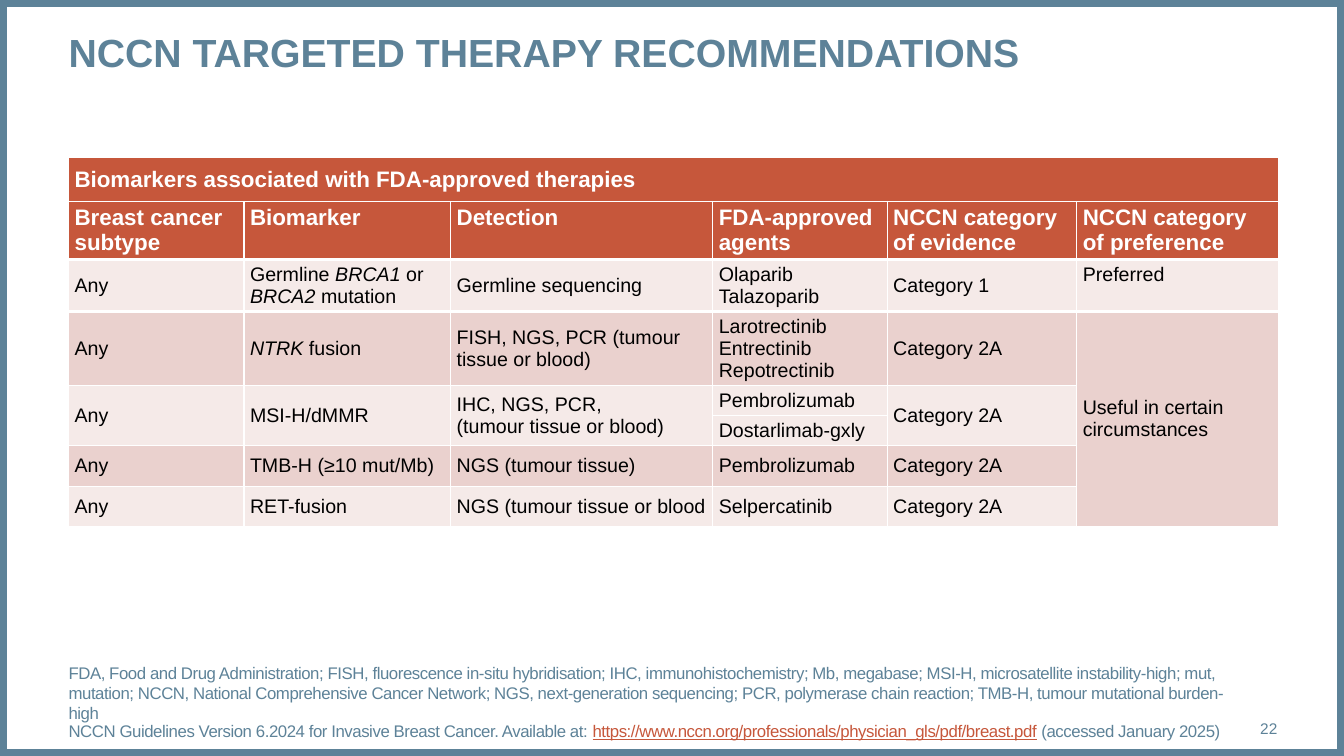
from lxml import etree
from pptx import Presentation
from pptx.dml.color import RGBColor
from pptx.enum.shapes import MSO_SHAPE
from pptx.enum.text import MSO_ANCHOR, MSO_AUTO_SIZE, PP_ALIGN
from pptx.oxml.ns import qn
from pptx.util import Inches, Pt

RECTANGLE = MSO_SHAPE.RECTANGLE
TOP, MIDDLE, BOTTOM = MSO_ANCHOR.TOP, MSO_ANCHOR.MIDDLE, MSO_ANCHOR.BOTTOM
LEFT, RIGHT = PP_ALIGN.LEFT, PP_ALIGN.RIGHT
NO_AUTOFIT = MSO_AUTO_SIZE.NONE

COLORS = {"slate": "5D8298", "rust": "C6573B", "pale": "F5EAE8",
          "rose": "EAD1CE", "white": "FFFFFF", "black": "000000"}
FONT = "Arial"
SLIDE_W, SLIDE_H = 13.33, 7.5
MARGIN, CONTENT_W = 0.68, 11.99

COLUMN_WIDTHS = [1.74, 2.05, 2.6, 1.73, 1.88, 2]
ROW_HEIGHTS = [0.44, 0.44, 0.4, 0.56, 0.28, 0.28, 0.4, 0.4]
ROW_FILLS = ["rust", "rust", "pale", "rose", "pale", "pale", "rose", "pale"]
HEADER_ROWS = 2
THERAPIES = [
    ["Biomarkers associated with FDA-approved therapies"] + [None] * 5,
    ["Breast cancer subtype", "Biomarker", "Detection", "FDA-approved agents",
     "NCCN category of evidence", "NCCN category of preference"],
    ["Any", "Germline *BRCA1 *or *BRCA2* mutation", "Germline sequencing",
     "Olaparib\nTalazoparib", "Category 1", "Preferred"],
    ["Any", "*NTRK* fusion", "FISH, NGS, PCR (tumour tissue or blood)",
     "Larotrectinib|Entrectinib|Repotrectinib", "Category 2A",
     "Useful in certain circumstances"],
    ["Any", "MSI-H/dMMR", "IHC, NGS, PCR, \n(tumour tissue or blood)",
     "Pembrolizumab", "Category 2A", None],
    [None, None, None, "Dostarlimab-gxly", None, None],
    ["Any", "TMB-H (≥10 mut/Mb)", "NGS (tumour tissue)", "Pembrolizumab",
     "Category 2A", None],
    ["Any", "RET-fusion", "NGS (tumour tissue or blood", "Selpercatinib",
     "Category 2A", None],
]
SPANS = [((0, 0), (0, 5)), ((3, 5), (7, 5))] + [
    ((4, column), (5, column)) for column in (0, 1, 2, 4)]
TOP_ANCHORED = {(1, column) for column in range(6)} | {(2, 3), (2, 5), (3, 3)}
THICK_BELOW = {1, 2}

ABBREVIATIONS = (
    "FDA, Food and Drug Administration; FISH, fluorescence in-situ hybridisation; "
    "IHC, immunohistochemistry; Mb, megabase; MSI-H, microsatellite instability-high; "
    "mut, mutation; NCCN, National Comprehensive Cancer Network; NGS, next-generation "
    "sequencing; PCR, polymerase chain reaction; TMB-H, tumour mutational burden-high")
CITATION = "NCCN Guidelines Version 6.2024 for Invasive Breast Cancer. Available at: "
GUIDELINE_URL = "https://www.nccn.org/professionals/physician_gls/pdf/breast.pdf"
ACCESSED = " (accessed January 2025)"


def rgb(name):
    return RGBColor.from_string(COLORS[name])


def write(paragraph, text, size=14, color="black", bold=False, italic=False,
          underline=False, spacing=None, align=LEFT):
    paragraph.alignment = align
    for index, line in enumerate(text.split("\n")):
        if index:
            paragraph.add_line_break()
        run = paragraph.add_run()
        run.text = line
        font = run.font
        font.name, font.size = FONT, Pt(size)
        font.bold, font.italic, font.underline = bold, italic, underline
        font.color.rgb = rgb(color)
        if spacing is not None:
            run._r.get_or_add_rPr().set("spc", str(round(spacing * 100)))


def place(shape, box, anchor):
    shape.left, shape.top, shape.width, shape.height = map(Inches, box)
    frame = shape.text_frame
    frame.word_wrap = True
    frame.auto_size = NO_AUTOFIT
    frame.vertical_anchor = anchor
    frame.margin_left = frame.margin_right = 0
    frame.margin_top = frame.margin_bottom = 0
    return frame


def add_border(slide, box):
    border = slide.shapes.add_shape(RECTANGLE, *map(Inches, box))
    border.shadow.inherit = False
    border.fill.background()
    border.line.color.rgb = rgb("slate")
    border.line.width = Pt(10)


def add_title(slide, box):
    frame = place(slide.shapes.title, box, TOP)
    write(frame.paragraphs[0], "NCCN TARGETED THERAPY RECOMMENDATIONS",
          size=28, color="slate", bold=True)


def set_cell_borders(cell, widths):
    properties = cell._tc.get_or_add_tcPr()
    for index, (side, width) in enumerate(widths.items()):
        line = etree.Element(qn(f"a:ln{side}"), w=str(Pt(width)))
        fill = etree.SubElement(line, qn("a:solidFill"))
        etree.SubElement(fill, qn("a:srgbClr"), val=COLORS["white"])
        properties.insert(index, line)


def fill_cell(cell, row, column):
    cell.margin_left = cell.margin_right = Inches(0.06)
    cell.margin_top = cell.margin_bottom = Inches(0.04)
    cell.vertical_anchor = TOP if (row, column) in TOP_ANCHORED else MIDDLE
    cell.fill.solid()
    in_preference_span = column == 5 and row >= 3
    cell.fill.fore_color.rgb = rgb("rose" if in_preference_span else ROW_FILLS[row])
    set_cell_borders(cell, {"L": 1, "R": 1,
                            "T": 3 if row - 1 in THICK_BELOW else 1,
                            "B": 3 if row in THICK_BELOW else 1})
    content = THERAPIES[row][column]
    if content is None:
        return
    header = row < HEADER_ROWS
    for index, entry in enumerate(content.split("|")):
        frame = cell.text_frame
        paragraph = frame.add_paragraph() if index else frame.paragraphs[0]
        for part, words in enumerate(entry.split("*")):
            if words:
                write(paragraph, words, size=16 if header else 14, bold=header,
                      color="white" if header else "black", italic=part % 2 == 1)


def add_therapies(slide, box):
    therapies = slide.shapes.add_table(
        len(ROW_HEIGHTS), len(COLUMN_WIDTHS), *map(Inches, box)).table
    therapies.first_row = therapies.horz_banding = False
    for column, width in zip(therapies.columns, COLUMN_WIDTHS):
        column.width = Inches(width)
    for row, height in zip(therapies.rows, ROW_HEIGHTS):
        row.height = Inches(height)
    for first, last in SPANS:
        therapies.cell(*first).merge(therapies.cell(*last))
    for row in range(len(ROW_HEIGHTS)):
        for column in range(len(COLUMN_WIDTHS)):
            fill_cell(therapies.cell(row, column), row, column)


def add_references(slide, box):
    frame = place(slide.placeholders[1], box, BOTTOM)
    abbreviations, citation = frame.paragraphs[0], frame.add_paragraph()
    for paragraph in (abbreviations, citation):
        properties = paragraph._p.get_or_add_pPr()
        properties.set("marL", "0")
        properties.set("indent", "0")
        etree.SubElement(properties, qn("a:buNone"))
        paragraph.space_before = Pt(0)
    citation.line_spacing = 0.9
    citation.space_after = Pt(2)
    note = {"size": 12, "color": "slate", "spacing": -0.3}
    write(abbreviations, ABBREVIATIONS, **note)
    write(citation, CITATION, **note)
    write(citation, GUIDELINE_URL, **{**note, "color": "rust", "underline": True})
    write(citation, ACCESSED, **note)


def add_page_number(slide, box):
    number = slide.shapes.add_textbox(*map(Inches, box))
    frame = place(number, box, MIDDLE)
    write(frame.paragraphs[0], "22", size=11, color="slate", align=RIGHT)


def main():
    deck = Presentation()
    deck.slide_width, deck.slide_height = Inches(SLIDE_W), Inches(SLIDE_H)
    slide = deck.slides.add_slide(deck.slide_layouts[1])
    add_border(slide, (0, 0, SLIDE_W, SLIDE_H))
    add_title(slide, (MARGIN, 0.28, CONTENT_W, 0.94))
    add_therapies(slide, (MARGIN, 1.56, CONTENT_W, sum(ROW_HEIGHTS)))
    add_references(slide, (MARGIN, 6.95, 11.5, 0.4))
    add_page_number(slide, (11.81, 7.03, 0.86, 0.4))
    deck.save("out.pptx")


if __name__ == "__main__":
    main()
